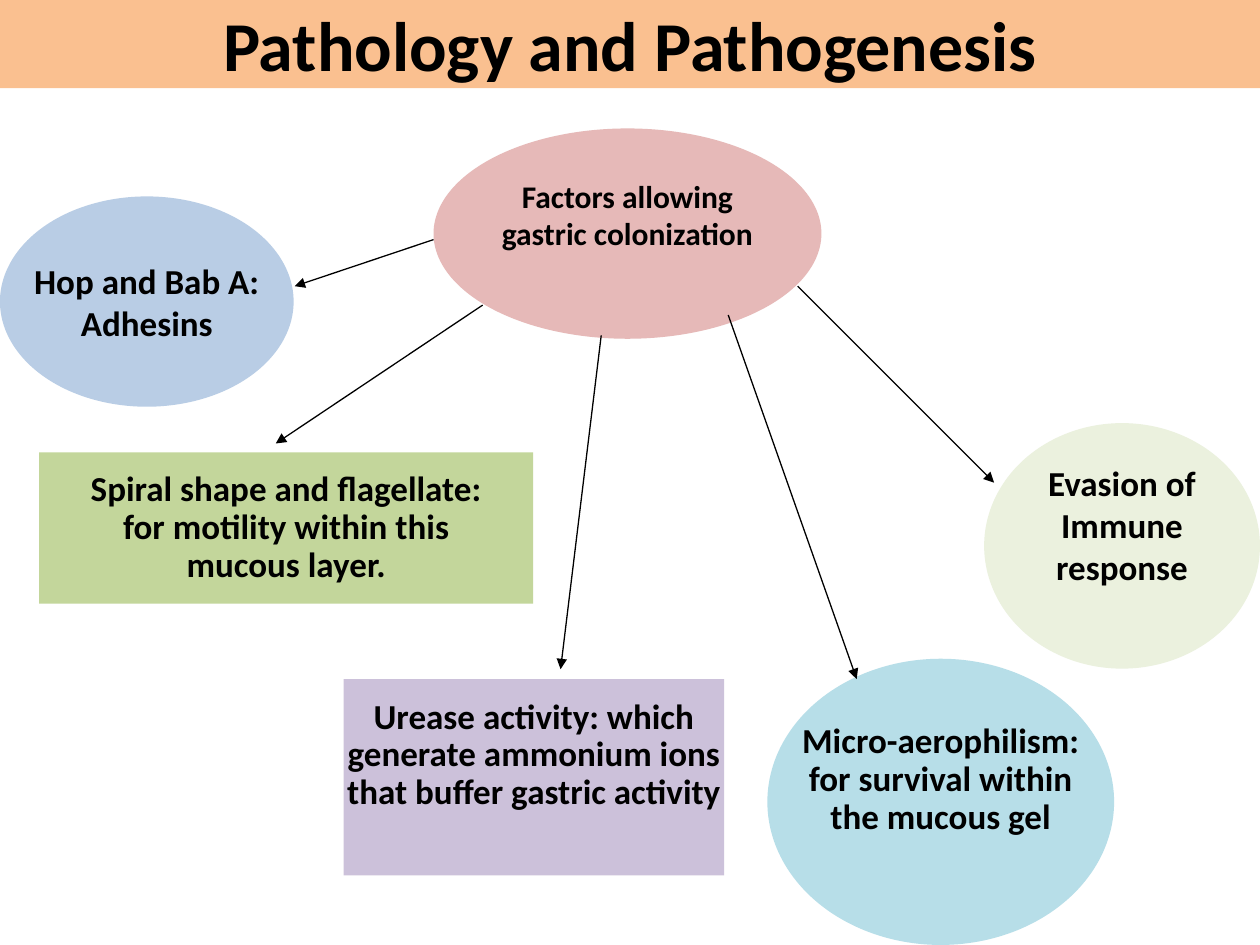
import pptx
import pptx.util
import pptx.dml.color
import pptx.enum.shapes
import pptx.enum.text
import pptx.oxml
import pptx.oxml.ns

Cm, Pt = pptx.util.Cm, pptx.util.Pt
RGB = pptx.dml.color.RGBColor
KIND = pptx.enum.shapes.MSO_SHAPE
OVAL, RECT = KIND.OVAL, KIND.RECTANGLE

BLACK = RGB(0x00, 0x00, 0x00)
PEACH = RGB(0xFA, 0xC0, 0x90)
ROSE = RGB(0xE6, 0xB9, 0xB8)
BLUE = RGB(0xB9, 0xCD, 0xE5)
GREEN = RGB(0xC3, 0xD6, 0x9B)
LILAC = RGB(0xCC, 0xC1, 0xDA)
AQUA = RGB(0xB7, 0xDE, 0xE8)
PALE = RGB(0xEB, 0xF1, 0xDE)

# kind, fill, (left, top, width, height) in cm, lines, format
NODES = [
    (OVAL, ROSE, (8.74, 2.59, 7.82, 4.24),
     ["Factors allowing", "gastric colonization"], {"size": 18, "foot": 0.9}),
    (OVAL, BLUE, (0, 3.96, 5.92, 4.24),
     ["Hop and Bab A:", "Adhesins"], {}),
    (RECT, GREEN, (0.79, 9.12, 9.96, 3.05),
     ["Spiral shape and flagellate:", "for motility within this",
      "mucous layer."], {"space": 0.9}),
    (RECT, LILAC, (6.93, 13.69, 7.67, 3.96),
     ["Urease activity: which", "generate ammonium ions",
      "that buffer gastric activity"], {"space": 0.9, "foot": 1}),
    (OVAL, AQUA, (15.47, 13.28, 6.99, 5.77),
     ["Micro-aerophilism:", "for survival within",
      "the mucous gel"], {"space": 0.9, "foot": 1}),
    (OVAL, PALE, (19.84, 8.53, 5.56, 4.95),
     ["Evasion of", "Immune", "response"], {"foot": 1}),
    (RECT, PEACH, (0, 0, 25.4, 1.78),
     ["Pathology and Pathogenesis"], {"size": 40, "wrap": True}),
]

# start x, start y, end x, end y in cm
ARROWS = [
    (8.74, 4.83, 5.94, 5.77),
    (9.73, 6.15, 5.56, 8.94),
    (12.12, 6.76, 11.3, 13.49),
    (14.68, 6.35, 17.27, 13.69),
    (16.08, 5.77, 20.04, 9.73),
]


def add_node(slide, kind, fill, box, lines, size=20, space=1, foot=0.13,
             wrap=False):
    """Draw a filled shape; foot is the bottom inset that lifts its text."""
    node = slide.shapes.add_shape(kind, *map(Cm, box))
    node.shadow.inherit = False
    node.fill.solid()
    node.fill.fore_color.rgb = fill
    node.line.fill.background()
    frame = node.text_frame
    frame.word_wrap = wrap
    frame.vertical_anchor = pptx.enum.text.MSO_ANCHOR.MIDDLE
    frame.margin_bottom = Cm(foot)
    style = {"name": "Calibri", "size": Pt(size), "bold": True}
    for i, line in enumerate(lines):
        para = frame.add_paragraph() if i else frame.paragraphs[0]
        para.alignment = pptx.enum.text.PP_ALIGN.CENTER
        para.line_spacing = float(space)
        run = para.add_run()
        run.text = line
        for key, value in style.items():
            setattr(run.font, key, value)
        run.font.color.rgb = BLACK


def add_arrow(slide, ends):
    straight = pptx.enum.shapes.MSO_CONNECTOR.STRAIGHT
    arrow = slide.shapes.add_connector(straight, *map(Cm, ends))
    arrow.line.color.rgb = BLACK
    arrow.line.width = Pt(0.75)
    names = pptx.oxml.ns.nsdecls("a")
    head = pptx.oxml.parse_xml(f'<a:tailEnd {names} type="triangle"/>')
    arrow.line._get_or_add_ln().append(head)
    flat = pptx.oxml.parse_xml(f"<a:effectLst {names}/>")
    arrow._element.spPr.append(flat)


def main():
    deck = pptx.Presentation()
    deck.slide_width, deck.slide_height = Cm(25.4), Cm(19.05)
    slide = deck.slides.add_slide(deck.slide_layouts[6])
    for kind, fill, box, lines, form in NODES:
        add_node(slide, kind, fill, box, lines, **form)
    for ends in ARROWS:
        add_arrow(slide, ends)
    deck.save("out.pptx")


if __name__ == "__main__":
    main()
